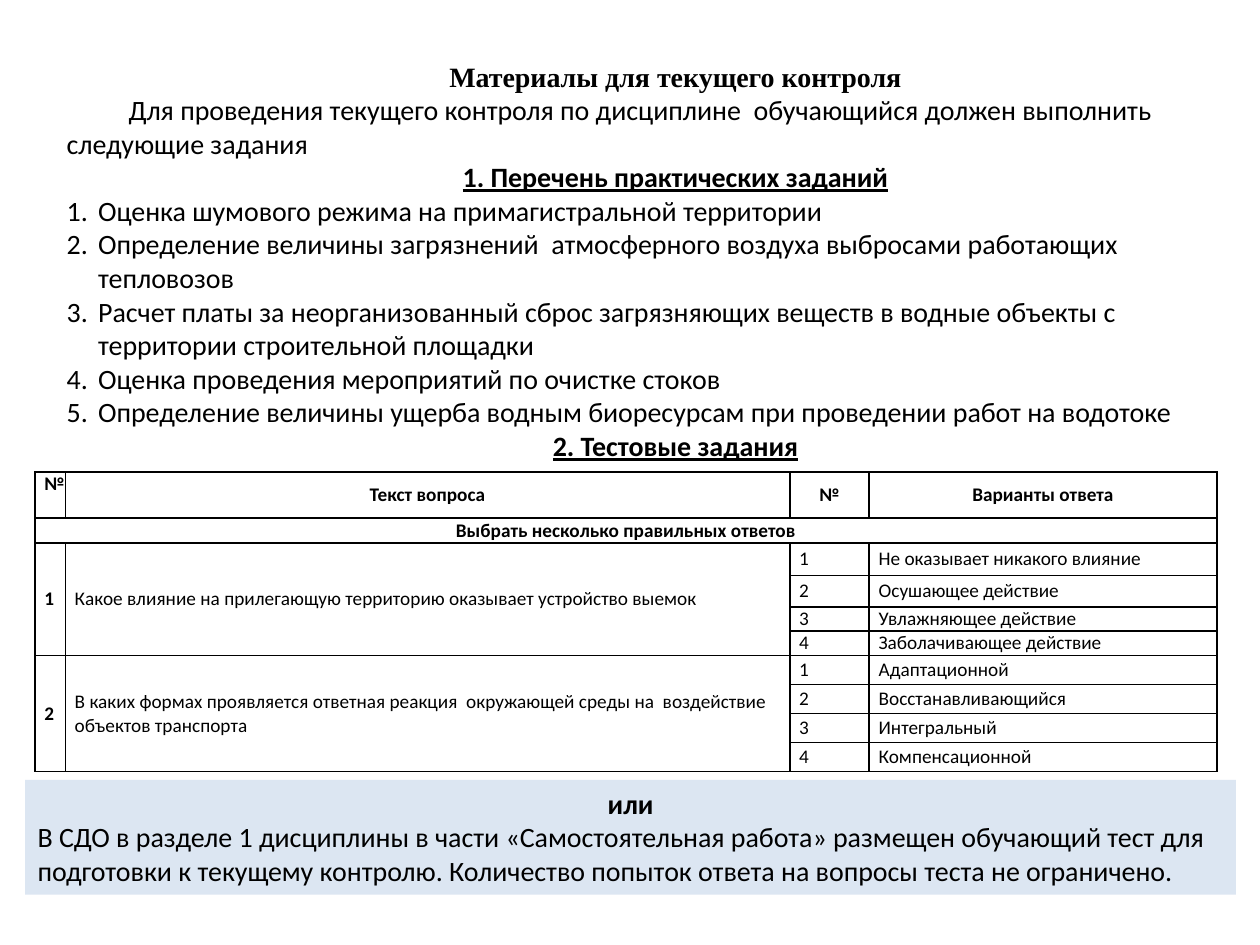
from pptx import Presentation
from pptx.dml.color import RGBColor
from pptx.enum.shapes import MSO_SHAPE
from pptx.enum.text import MSO_ANCHOR, PP_ALIGN
from pptx.oxml.ns import qn
from pptx.util import Pt
from lxml.etree import SubElement

BLACK = RGBColor(0x00, 0x00, 0x00)
PALE = RGBColor(0xDC, 0xE6, 0xF2)
BODY, SERIF = "Calibri", "Times New Roman"

TITLE = "Материалы для текущего контроля"
INTRO = ("Для проведения текущего контроля по дисциплине  обучающийся "
         "должен выполнить следующие задания")
TASK_HEAD = "1. Перечень практических заданий"
TASKS = [
    "Оценка шумового режима на примагистральной территории",
    "Определение величины загрязнений  атмосферного воздуха выбросами "
    "работающих тепловозов",
    "Расчет платы за неорганизованный сброс загрязняющих веществ в водные "
    "объекты с территории строительной площадки",
    "Оценка проведения мероприятий по очистке стоков",
    "Определение величины ущерба водным биоресурсам при проведении работ "
    "на водотоке",
]
TEST_HEAD = "2. Тестовые задания"

HEADS = ["№", "Текст вопроса", "№", "Варианты ответа"]
BAND = "Выбрать несколько правильных ответов"
QUIZ = [
    ("Какое влияние на прилегающую территорию оказывает устройство выемок",
     ["Не оказывает никакого влияние", "Осушающее действие",
      "Увлажняющее действие", "Заболачивающее действие"]),
    ("В каких формах проявляется ответная реакция  окружающей среды на  "
     "воздействие объектов транспорта",
     ["Адаптационной", "Восстанавливающийся", "Интегральный",
      "Компенсационной"]),
]
COLS = [17.3, 414, 45.4, 198.7]
ROWS = [26.3, 14.3, 18.4, 18.1, 13.2, 14.2] + [16.6] * 4

OR_HEAD = "или"
OR_TEXT = ("В СДО в разделе 1 дисциплины в части «Самостоятельная работа» "
           "размещен обучающий тест для подготовки к текущему контролю. "
           "Количество попыток ответа на вопросы теста не ограничено.")


def write(para, text, size=16, bold=False, line=False, face=BODY,
          align=PP_ALIGN.LEFT):
    para.alignment = align
    run = para.add_run()
    run.text = text
    font = run.font
    font.name, font.size, font.bold, font.underline = face, Pt(size), bold, line
    font.color.rgb = BLACK


def indent(para, left, first):
    props = para._p.get_or_add_pPr()
    props.set("marL", str(Pt(left)))
    props.set("indent", str(Pt(first)))
    return props


def border(cell):
    """Draw a thin black line on all four sides of the cell."""
    props = cell._tc.get_or_add_tcPr()
    for at, side in enumerate(("lnL", "lnR", "lnT", "lnB")):
        line = props.makeelement(qn("a:" + side), {"w": str(Pt(1))})
        fill = SubElement(line, qn("a:solidFill"))
        SubElement(fill, qn("a:srgbClr"), val=str(BLACK))
        props.insert(at, line)


def add_text(slide):
    box = slide.shapes.add_textbox(Pt(31), Pt(30.2), Pt(674.6), Pt(262))
    frame = box.text_frame
    frame.word_wrap = True
    frame.vertical_anchor = MSO_ANCHOR.TOP
    head = {"bold": True, "align": PP_ALIGN.CENTER}
    parts = [(TITLE, {**head, "face": SERIF}), (INTRO, {}),
             (TASK_HEAD, {**head, "line": True})]
    parts += [(task, None) for task in TASKS]
    parts.append((TEST_HEAD, {**head, "line": True}))
    for i, (text, style) in enumerate(parts):
        para = frame.add_paragraph() if i else frame.paragraphs[0]
        write(para, text, **(style or {}))
        if style is None:
            props = indent(para, 18, -18)
            SubElement(props, qn("a:buFont"), typeface="+mj-lt")
            SubElement(props, qn("a:buAutoNum"), type="arabicPeriod")
        else:
            indent(para, 0, 35.4)


def add_quiz(slide):
    grid = slide.shapes.add_table(len(ROWS), len(COLS), Pt(20), Pt(269.8),
                                  Pt(sum(COLS)), Pt(sum(ROWS))).table
    grid.first_row = grid.horz_banding = False
    for col, width in zip(grid.columns, COLS):
        col.width = Pt(width)
    for row, height in zip(grid.rows, ROWS):
        row.height = Pt(height)
    for cell in grid.iter_cells():
        cell.fill.background()
        border(cell)
        cell.margin_left = cell.margin_right = Pt(5.4)
        cell.margin_top = cell.margin_bottom = 0
        cell.vertical_anchor = MSO_ANCHOR.MIDDLE

    def put(row, col, text, **style):
        write(grid.cell(row, col).text_frame.paragraphs[0], text, 11, **style)

    for col, text in enumerate(HEADS):
        put(0, col, text, bold=True,
            align=PP_ALIGN.CENTER if col else PP_ALIGN.LEFT)
    grid.cell(0, 0).vertical_anchor = MSO_ANCHOR.TOP
    grid.cell(1, 0).merge(grid.cell(1, 3))
    put(1, 0, BAND, bold=True, align=PP_ALIGN.CENTER)

    top = 2
    for num, (ask, answers) in enumerate(QUIZ, 1):
        end = top + len(answers)
        for col in (0, 1):
            grid.cell(top, col).merge(grid.cell(end - 1, col))
        put(top, 0, str(num), bold=True)
        put(top, 1, ask)
        for i, text in enumerate(answers):
            put(top + i, 2, str(i + 1))
            put(top + i, 3, text)
        top = end


def add_note(slide):
    note = slide.shapes.add_shape(MSO_SHAPE.RECTANGLE, Pt(14.4), Pt(445.7),
                                  Pt(691.9), Pt(65.5))
    note.shadow.inherit = False
    note.fill.solid()
    note.fill.fore_color.rgb = PALE
    note.line.fill.background()
    frame = note.text_frame
    frame.word_wrap = True
    frame.vertical_anchor = MSO_ANCHOR.TOP
    write(frame.paragraphs[0], OR_HEAD, bold=True, align=PP_ALIGN.CENTER)
    write(frame.add_paragraph(), OR_TEXT)


def main():
    deck = Presentation()
    deck.slide_width, deck.slide_height = Pt(720), Pt(540)
    slide = deck.slides.add_slide(deck.slide_layouts[6])
    add_quiz(slide)
    add_text(slide)
    add_note(slide)
    deck.save("out.pptx")


if __name__ == "__main__":
    main()
